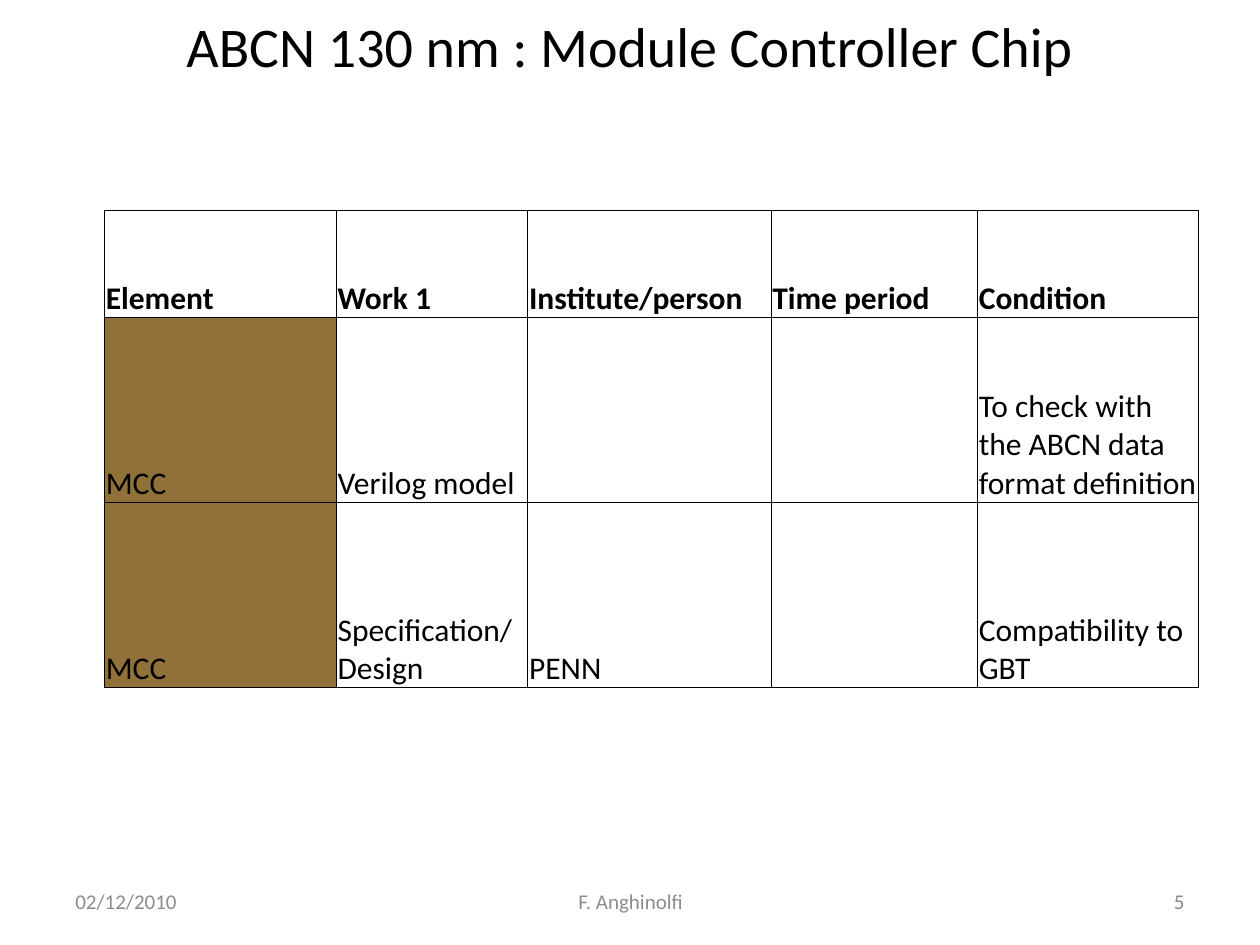
from lxml.etree import SubElement
from pptx import Presentation
from pptx.dml.color import RGBColor as RGB
from pptx.enum.text import MSO_ANCHOR as Anchor, PP_ALIGN as Align
from pptx.oxml.ns import qn
from pptx.util import Inches, Pt

BLACK = RGB(0x00, 0x00, 0x00)
WHITE = RGB(0xFF, 0xFF, 0xFF)
BROWN = RGB(0x90, 0x71, 0x3A)
GREY = RGB(0x8C, 0x8C, 0x8C)
PAGE_GREY = RGB(0x89, 0x89, 0x89)

COLUMN_WIDTHS = [1.84, 1.52, 1.93, 1.64, 1.75]
ROW_HEIGHTS = [0.85, 1.47, 1.47]
WORK_PLAN = [
    ["Element", "Work 1", "Institute/person", "Time period", "Condition"],
    ["MCC", "Verilog model", "", "", "To check with the ABCN data format definition"],
    ["MCC", "Specification/Design", "PENN", "", "Compatibility to GBT"],
]
CELL_FORMAT = {
    "vertical_anchor": Anchor.BOTTOM,
    "margin_left": Inches(0.01),
    "margin_right": Inches(0.01),
    "margin_top": Inches(0.01),
    "margin_bottom": 0,
}


def apply_format(target, values):
    for name, value in values.items():
        setattr(target, name, value)


def style_font(font, size, color, bold=False):
    apply_format(font, {"name": "Calibri", "size": Pt(size), "bold": bold})
    font.color.rgb = color


def add_label(slide, text, bounds, size, color, align, frame_format):
    frame = slide.shapes.add_textbox(*map(Inches, bounds)).text_frame
    apply_format(frame, {"word_wrap": True, **frame_format})
    line = frame.paragraphs[0]
    line.text = text
    line.alignment = align
    style_font(line.font, size, color)


def add_borders(cell):
    properties = cell._tc.get_or_add_tcPr()
    for side in ("lnL", "lnR", "lnT", "lnB"):
        border = SubElement(properties, qn(f"a:{side}"), w=str(Pt(0.5)))
        fill = SubElement(border, qn("a:solidFill"))
        SubElement(fill, qn("a:srgbClr"), val=str(BLACK))


def fill_cell(cell, text, heading, color):
    apply_format(cell, CELL_FORMAT)
    add_borders(cell)
    cell.fill.solid()
    cell.fill.fore_color.rgb = color
    line = cell.text_frame.paragraphs[0]
    line.text = text
    style_font(line.font, 18, BLACK, heading)


def add_work_plan(slide):
    bounds = (0.83, 1.67, sum(COLUMN_WIDTHS), sum(ROW_HEIGHTS))
    plan = slide.shapes.add_table(
        len(ROW_HEIGHTS), len(COLUMN_WIDTHS), *map(Inches, bounds)
    ).table
    apply_format(plan, {"first_row": False, "horz_banding": False})
    for column, width in zip(plan.columns, COLUMN_WIDTHS):
        column.width = Inches(width)
    for row, height in zip(plan.rows, ROW_HEIGHTS):
        row.height = Inches(height)
    for r, entries in enumerate(WORK_PLAN):
        for c, text in enumerate(entries):
            color = BROWN if r > 0 and c == 0 else WHITE
            fill_cell(plan.cell(r, c), text, r == 0, color)


def main():
    deck = Presentation()
    apply_format(deck, {"slide_width": Inches(10), "slide_height": Inches(7.5)})
    slide = deck.slides.add_slide(deck.slide_layouts[6])
    middle = {"vertical_anchor": Anchor.MIDDLE}
    for text, left, width, color, align in (
        ("02/12/2010", 0.5, 2.33, GREY, Align.LEFT),
        ("5", 7.17, 2.33, PAGE_GREY, Align.RIGHT),
        ("F. Anghinolfi", 3.42, 3.17, GREY, Align.CENTER),
    ):
        add_label(slide, text, (left, 6.95, width, 0.4), 12, color, align, middle)
    add_label(
        slide, "ABCN 130 nm : Module Controller Chip", (0.5, 0, 9, 1.25),
        32, BLACK, Align.CENTER,
        {"vertical_anchor": Anchor.TOP, "margin_top": Inches(0.09)},
    )
    add_work_plan(slide)
    deck.save("out.pptx")


if __name__ == "__main__":
    main()
